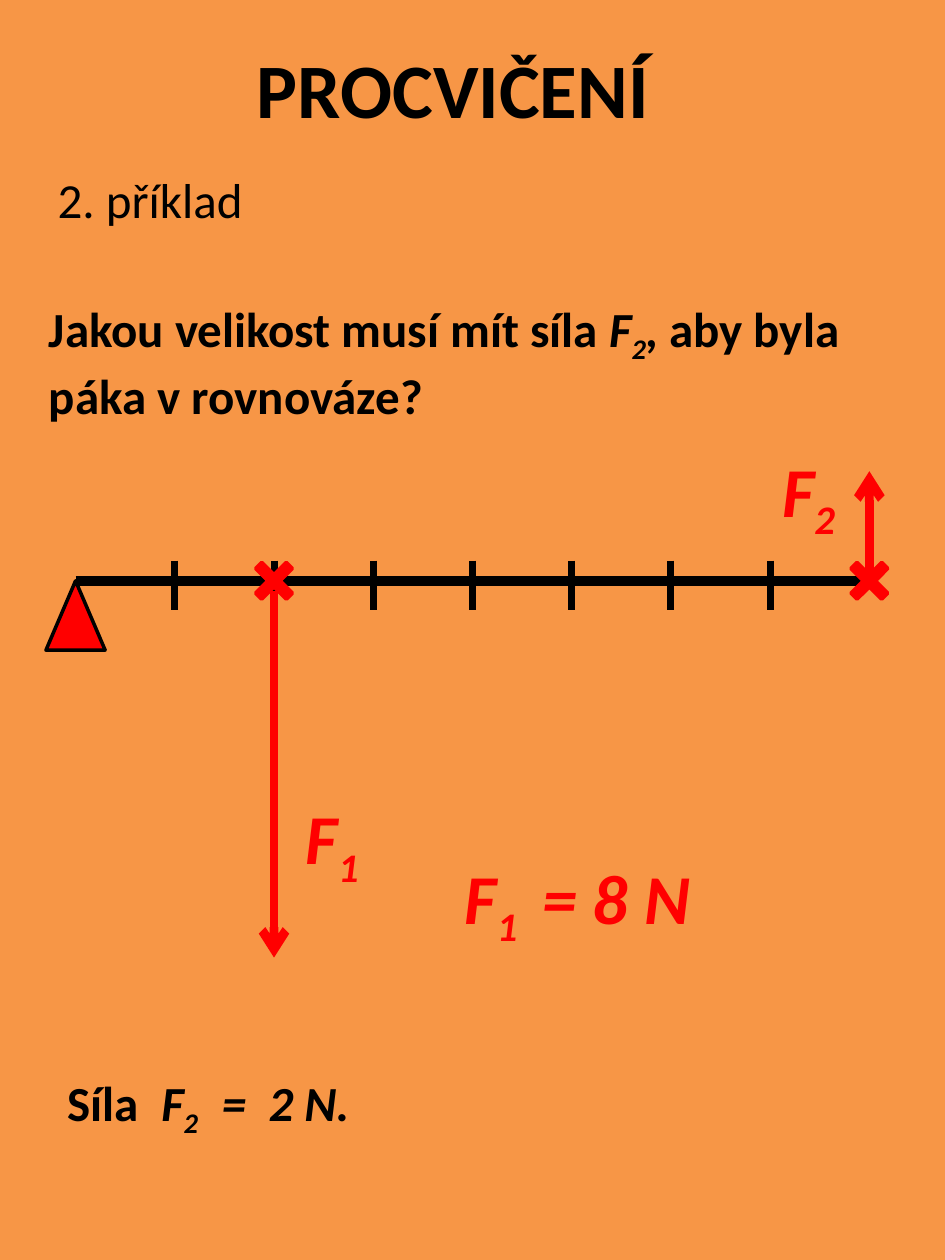
"""Builds a physics exercise slide about the balance of a lever."""
from lxml.etree import SubElement
from pptx import Presentation
from pptx.dml.color import RGBColor
from pptx.enum.shapes import MSO_CONNECTOR as Connector, MSO_SHAPE as Shape
from pptx.enum.text import MSO_AUTO_SIZE as AutoSize
from pptx.oxml.ns import qn
from pptx.util import Inches, Pt

TEXTS = [
    dict(at=(1.94, 0.28, 3.34, 0.84), style="title", runs=[("PROCVIČENÍ", "")]),
    dict(at=(0.36, 1.3, 1.69, 0.57), style="label", runs=[("2. příklad", "")]),
    dict(at=(0.29, 2.32, 6.79, 1.04), style="body", wrap=True, runs=[
        ("Jakou velikost musí mít síla ", ""), ("F", "italic"), ("2", "sub"),
        (", aby byla páka v rovnováze?", "")]),
    dict(at=(6.11, 3.5, 0.65, 0.77), style="force",
         runs=[("F", "italic"), ("2", "sub")]),
    dict(at=(2.33, 6.26, 0.65, 0.77), style="force",
         runs=[("F", "italic"), ("1", "sub")]),
    dict(at=(3.59, 6.73, 2.04, 0.77), style="force", wrap=True,
         runs=[("F", "italic"), ("1 ", "sub"), (" = 8 N", "italic")]),
    dict(at=(0.44, 8.46, 3.16, 0.57), style="body", runs=[
        ("Síla  ", ""), ("F", "italic"), ("2  ", "sub"), (" =  2 N.", "italic")]),
]
FORCES = [dict(arm=8, start=4.61, end=3.74), dict(arm=2, start=4.69, end=7.6)]

THEME = dict(
    font="Calibri", background="F79646", ink="000000", accent="FF0000",
    title=(44, True, "ink"), label=(28, False, "ink"),
    body=(28, True, "ink"), force=(40, True, "accent"),
    beam=6, tick=4, arrow=5, outline=2,
)

WIDTH, HEIGHT = 7.5, 10
PIVOT_X, BEAM_Y = 0.08 * WIDTH, 4.61
DIVISIONS = 8
STEP = 0.84 * WIDTH / DIVISIONS
TICK_TOP, TICK_BOTTOM = 4.45, 4.84
SUPPORT_WIDTH, SUPPORT_HEIGHT = 0.47, 0.55
CROSS = 0.47


def color(name):
    return RGBColor.from_string(THEME[name])


def arm_x(arm):
    return PIVOT_X + arm * STEP


def add_text(slide, at, style, runs, wrap=False):
    size, bold, ink = THEME[style]
    frame = slide.shapes.add_textbox(*map(Inches, at)).text_frame
    frame.word_wrap = wrap
    frame.auto_size = AutoSize.SHAPE_TO_FIT_TEXT
    paragraph = frame.paragraphs[0]
    paragraph.font.name = THEME["font"]
    paragraph.font.size = Pt(size)
    paragraph.font.bold = bold
    paragraph.font.color.rgb = color(ink)
    for text, kind in runs:
        run = paragraph.add_run()
        run.text = text
        run.font.italic = bool(kind)
        if kind == "sub":
            run.font._element.set("baseline", "-25000")


def add_line(slide, start, end, ink, weight, arrow=False):
    line = slide.shapes.add_connector(
        Connector.STRAIGHT, *map(Inches, (*start, *end)))
    line.line.color.rgb = color(ink)
    line.line.width = Pt(weight)
    if arrow:
        SubElement(line.line._get_or_add_ln(), qn("a:tailEnd"), type="arrow")
    SubElement(line._element.spPr, qn("a:effectLst"))


def add_shape(slide, kind, at, outline):
    shape = slide.shapes.add_shape(kind, *map(Inches, at))
    shape.shadow.inherit = False
    shape.fill.solid()
    shape.fill.fore_color.rgb = color("accent")
    shape.line.color.rgb = color(outline)
    shape.line.width = Pt(THEME["outline"])
    return shape


def draw_lever(slide):
    add_line(slide, (PIVOT_X, BEAM_Y), (arm_x(DIVISIONS), BEAM_Y),
             "ink", THEME["beam"])
    add_shape(slide, Shape.ISOSCELES_TRIANGLE,
              (PIVOT_X - SUPPORT_WIDTH / 2, BEAM_Y, SUPPORT_WIDTH, SUPPORT_HEIGHT),
              "ink")
    for arm in range(1, DIVISIONS):
        add_line(slide, (arm_x(arm), TICK_TOP), (arm_x(arm), TICK_BOTTOM),
                 "ink", THEME["tick"])


def draw_force(slide, arm, start, end):
    x = arm_x(arm)
    add_line(slide, (x, start), (x, end), "accent", THEME["arrow"], arrow=True)
    cross = add_shape(slide, Shape.MATH_MULTIPLY,
                      (x - CROSS / 2, BEAM_Y - CROSS / 2, CROSS, CROSS), "accent")
    cross.adjustments[0] = 0.146


def main():
    presentation = Presentation()
    presentation.slide_width = Inches(WIDTH)
    presentation.slide_height = Inches(HEIGHT)
    slide = presentation.slides.add_slide(presentation.slide_layouts[6])
    slide.background.fill.solid()
    slide.background.fill.fore_color.rgb = color("background")
    draw_lever(slide)
    for force in FORCES:
        draw_force(slide, **force)
    for text in TEXTS:
        add_text(slide, **text)
    presentation.save("out.pptx")


if __name__ == "__main__":
    main()
